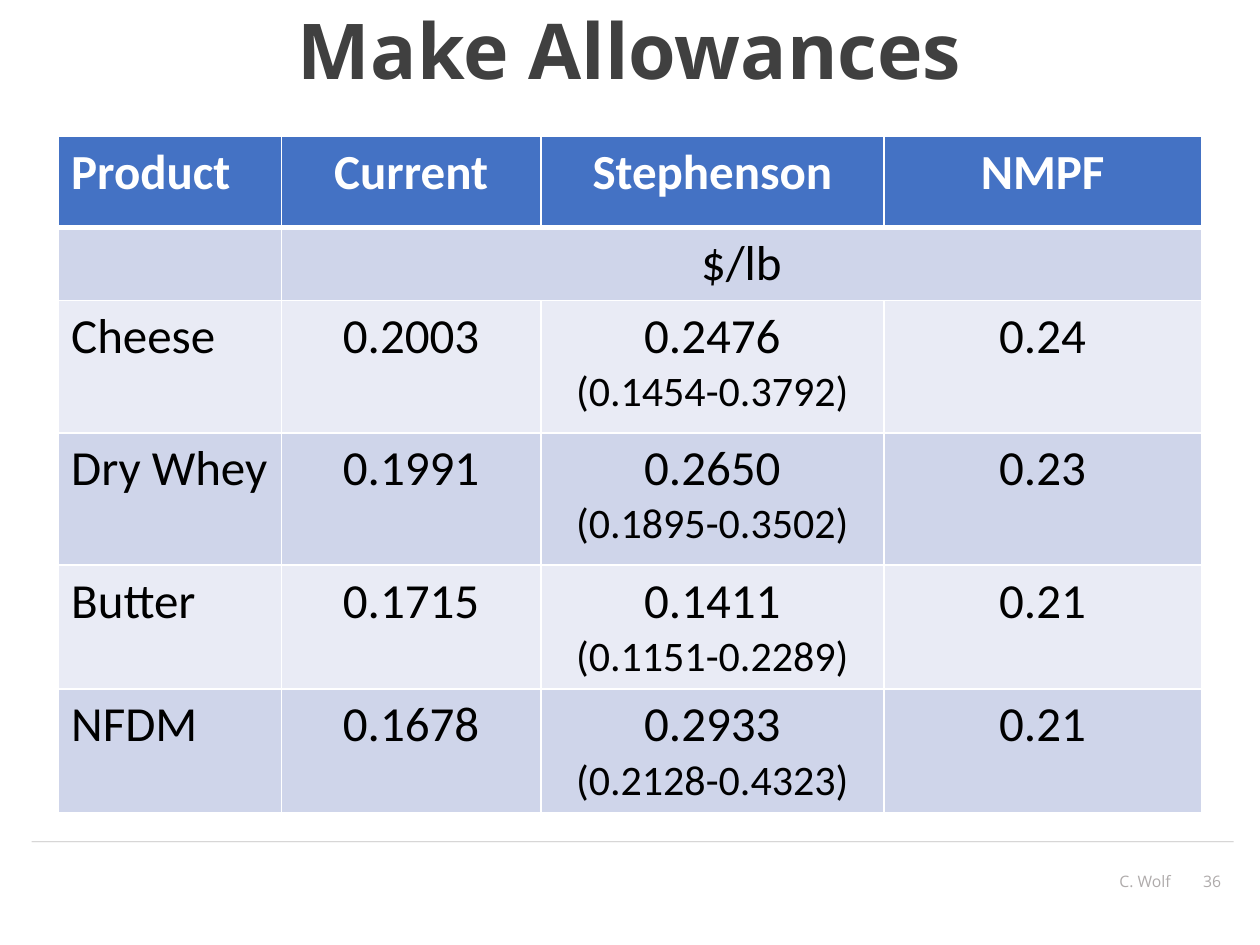
from lxml import etree
from pptx import Presentation
from pptx.dml.color import RGBColor
from pptx.enum.shapes import MSO_CONNECTOR
from pptx.enum.text import MSO_ANCHOR, PP_ALIGN
from pptx.oxml.ns import qn
from pptx.util import Pt

LEFT, CENTER, RIGHT = PP_ALIGN.LEFT, PP_ALIGN.CENTER, PP_ALIGN.RIGHT
TOP = MSO_ANCHOR.TOP
STRAIGHT = MSO_CONNECTOR.STRAIGHT
TITLE_ONLY = 5

WHITE = RGBColor(0xFF, 0xFF, 0xFF)
BLACK = RGBColor(0, 0, 0)
DARK_GRAY = RGBColor(0x40, 0x40, 0x40)
GRAY = RGBColor(0xAF, 0xAB, 0xAB)
HEADER_BLUE = RGBColor(0x44, 0x72, 0xC4)
BANDS = (RGBColor(0xCF, 0xD5, 0xEA), RGBColor(0xE9, 0xEB, 0xF5))

HEADING_FONT, TABLE_FONT = "Open Sans", "Calibri"
COLUMN_WIDTHS = (127.3, 148.3, 196, 181.4)
ROW_HEIGHTS = (52, 41.8, 75.6, 75.6, 70.8, 70.8)
ROWS = (
    ("Product", "Current", "Stephenson", "NMPF"),
    ("", "$/lb", "", ""),
    ("Cheese", "0.2003", "0.2476\n(0.1454-0.3792)", "0.24"),
    ("Dry Whey", "0.1991", "0.2650\n(0.1895-0.3502)", "0.23"),
    ("Butter", "0.1715", "0.1411\n(0.1151-0.2289)", "0.21"),
    ("NFDM", "0.1678", "0.2933\n(0.2128-0.4323)", "0.21"),
)


def format_para(para, name, size, color, align, bold=False):
    para.alignment = align
    font = para.font
    font.name, font.size, font.bold = name, Pt(size), bold
    font.color.rgb = color


def set_title(page, text):
    title = page.shapes.title
    title.left, title.top, title.width, title.height = Pt(36.7), Pt(3.6), Pt(646.6), Pt(90)
    frame = title.text_frame
    frame.text = text
    frame.vertical_anchor = TOP
    para = frame.paragraphs[0]
    para.line_spacing = 0.9
    format_para(para, HEADING_FONT, 44, DARK_GRAY, CENTER, True)


def set_borders(cell, bottom_width):
    """Draw white cell borders; they must precede the fill in the XML."""
    properties = cell._tc.get_or_add_tcPr()
    for index, (tag, width) in enumerate(
        (("a:lnL", 1), ("a:lnR", 1), ("a:lnT", 1), ("a:lnB", bottom_width))
    ):
        border = etree.Element(qn(tag), w=str(Pt(width)))
        fill = etree.SubElement(border, qn("a:solidFill"))
        etree.SubElement(fill, qn("a:srgbClr"), val=str(WHITE))
        properties.insert(index, border)


def fill_cell(cell, text, row, column):
    is_header = row == 0
    cell.fill.solid()
    cell.fill.fore_color.rgb = HEADER_BLUE if is_header else BANDS[(row - 1) % 2]
    set_borders(cell, 3 if is_header else 1)
    cell.text = text
    for index, para in enumerate(cell.text_frame.paragraphs):
        format_para(
            para,
            TABLE_FONT,
            24 if index else 28,
            WHITE if is_header else BLACK,
            CENTER if column else LEFT,
            is_header,
        )


def add_allowance_table(page):
    table = page.shapes.add_table(
        len(ROWS), len(COLUMN_WIDTHS), Pt(33.5), Pt(78),
        Pt(sum(COLUMN_WIDTHS)), Pt(sum(ROW_HEIGHTS)),
    ).table
    for column, width in zip(table.columns, COLUMN_WIDTHS):
        column.width = Pt(width)
    for row, height in zip(table.rows, ROW_HEIGHTS):
        row.height = Pt(height)
    for row, texts in enumerate(ROWS):
        for column, text in enumerate(texts):
            fill_cell(table.cell(row, column), text, row, column)
    table.cell(1, 1).merge(table.cell(1, 3))


def add_footer_rule(page):
    rule = page.shapes.add_connector(STRAIGHT, Pt(18), Pt(481), Pt(705), Pt(481))
    rule.line.width = Pt(0.5)
    rule.line.color.rgb = GRAY
    color = rule.line._ln.find(".//" + qn("a:srgbClr"))
    etree.SubElement(color, qn("a:alpha"), val="75000")
    etree.SubElement(rule._element.spPr, qn("a:effectLst"))


def add_footer_text(page, text, left, width):
    box = page.shapes.add_textbox(Pt(left), Pt(494.6), Pt(width), Pt(28.8))
    frame = box.text_frame
    frame.word_wrap = True
    frame.vertical_anchor = TOP
    frame.text = text
    format_para(frame.paragraphs[0], HEADING_FONT, 9, GRAY, RIGHT)


def main():
    deck = Presentation()
    deck.slide_width, deck.slide_height = Pt(720), Pt(540)
    page = deck.slides.add_slide(deck.slide_layouts[TITLE_ONLY])
    add_footer_rule(page)
    set_title(page, "Make Allowances")
    add_allowance_table(page)
    add_footer_text(page, "C. Wolf", 313.2, 362.9)
    add_footer_text(page, "36", 676.1, 28.8)
    deck.save("out.pptx")


if __name__ == "__main__":
    main()
